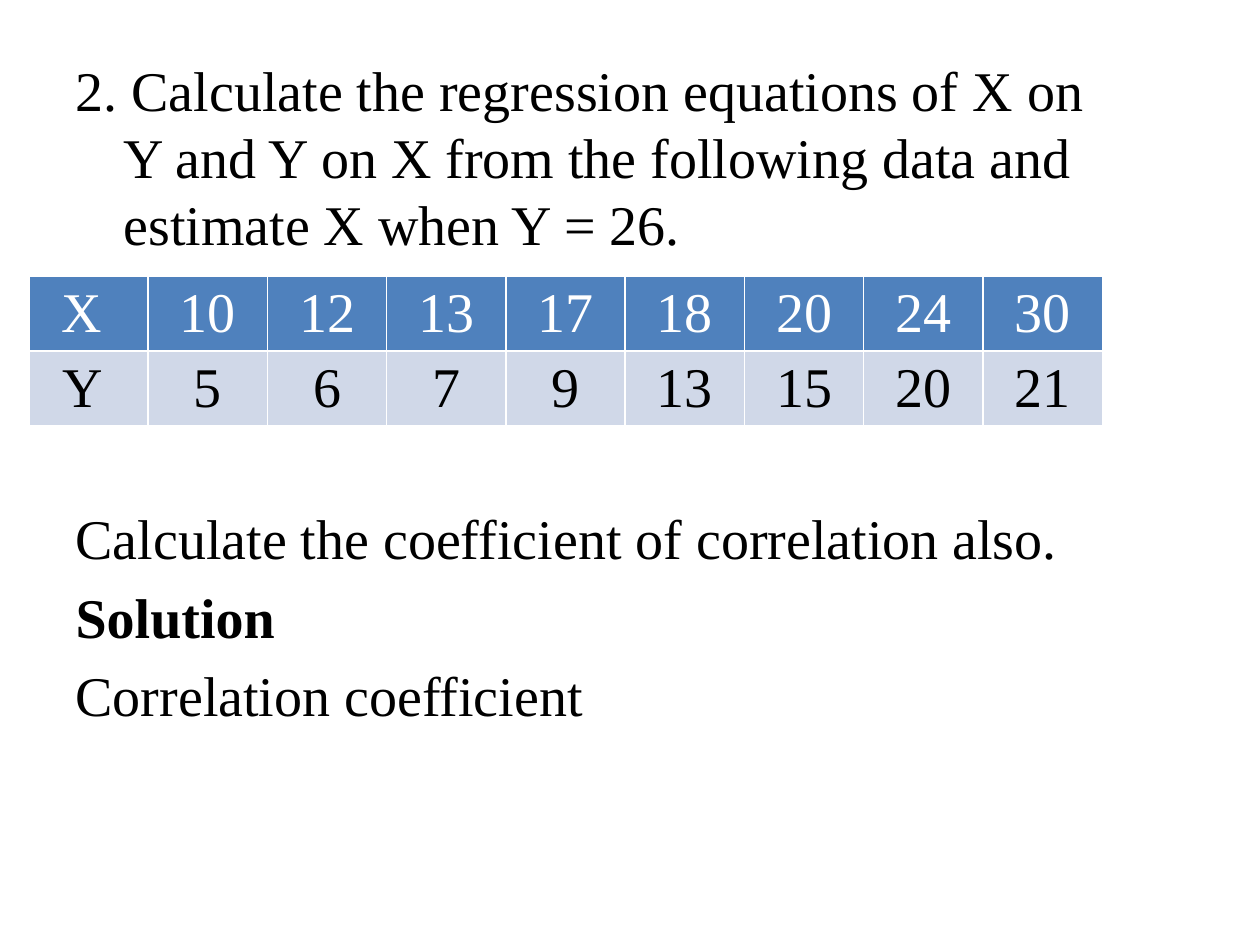
from dataclasses import dataclass

from lxml import etree
from pptx import Presentation
from pptx.dml.color import RGBColor
from pptx.enum.text import MSO_ANCHOR, MSO_AUTO_SIZE, PP_ALIGN
from pptx.oxml.ns import qn
from pptx.util import Inches, Pt

CENTER = PP_ALIGN.CENTER
TOP = MSO_ANCHOR.TOP
NO_AUTOFIT = MSO_AUTO_SIZE.NONE
TITLE_AND_CONTENT = 1


@dataclass(frozen=True)
class Theme:
    font: str = "Times New Roman"
    size: float = 32
    black: str = "000000"
    white: str = "FFFFFF"
    header: str = "4F81BD"
    band: str = "D0D8E8"
    para_gap: float = 6.4
    table_gap: float = 141


THEME = Theme()
X_VALUES = [10, 12, 13, 17, 18, 20, 24, 30]
Y_VALUES = [5, 6, 7, 9, 13, 15, 20, 21]


def write(p, text, color=THEME.black, bold=False, align=None, before=0):
    p.text = text
    p.alignment = align
    p.space_before = Pt(before)
    for r in p.runs:
        r.font.name = THEME.font
        r.font.size = Pt(THEME.size)
        r.font.bold = bold
        r.font.color.rgb = RGBColor.from_string(color)


def hang(p, indent):
    pPr = p._p.get_or_add_pPr()
    pPr.set("marL", str(indent))
    pPr.set("indent", str(-indent))
    etree.SubElement(pPr, qn("a:buNone"))


def add_body(s, paragraphs):
    sp = s.placeholders[1]
    sp.left, sp.top = Inches(0.5), Inches(0.39)
    sp.width, sp.height = Inches(8.88), Inches(6.31)
    tf = sp.text_frame
    tf.word_wrap = True
    tf.auto_size = NO_AUTOFIT
    tf.vertical_anchor = TOP
    for i, (text, style) in enumerate(paragraphs):
        p = tf.add_paragraph() if i else tf.paragraphs[0]
        write(p, text, **style)
        hang(p, Inches(0.38))


def set_borders(cell, color, width):
    tcPr = cell._tc.get_or_add_tcPr()
    for i, side in enumerate(("lnL", "lnR", "lnT", "lnB")):
        ln = etree.Element(qn(f"a:{side}"), w=str(Pt(width)))
        fill = etree.SubElement(ln, qn("a:solidFill"))
        etree.SubElement(fill, qn("a:srgbClr"), val=color)
        tcPr.insert(i, ln)


def add_data_table(s, rows):
    styles = [(THEME.header, THEME.white), (THEME.band, THEME.black)]
    table = s.shapes.add_table(len(rows), len(rows[0]), Inches(0.23), Inches(2.19),
                               Inches(8.52), Inches(1.18)).table
    for i, (values, (fill, color)) in enumerate(zip(rows, styles)):
        for j, value in enumerate(values):
            cell = table.cell(i, j)
            cell.fill.solid()
            cell.fill.fore_color.rgb = RGBColor.from_string(fill)
            set_borders(cell, THEME.white, 1)
            write(cell.text_frame.paragraphs[0], str(value), color=color, align=CENTER)


def main():
    prs = Presentation()
    prs.slide_width, prs.slide_height = Inches(10), Inches(7.5)
    s = prs.slides.add_slide(prs.slide_layouts[TITLE_AND_CONTENT])
    title = s.shapes.title._element
    title.getparent().remove(title)
    gap = THEME.para_gap
    add_body(s, [
        ("2. Calculate the regression equations of X on\v"
         "Y and Y on X from the following data and estimate X when Y = 26.", {"before": gap}),
        ("Calculate the coefficient of correlation also.", {"before": THEME.table_gap}),
        ("Solution", {"bold": True, "before": gap}),
        ("Correlation coefficient", {"before": gap}),
    ])
    add_data_table(s, [["X ", *X_VALUES], ["Y ", *Y_VALUES]])
    prs.save("out.pptx")


if __name__ == "__main__":
    main()
